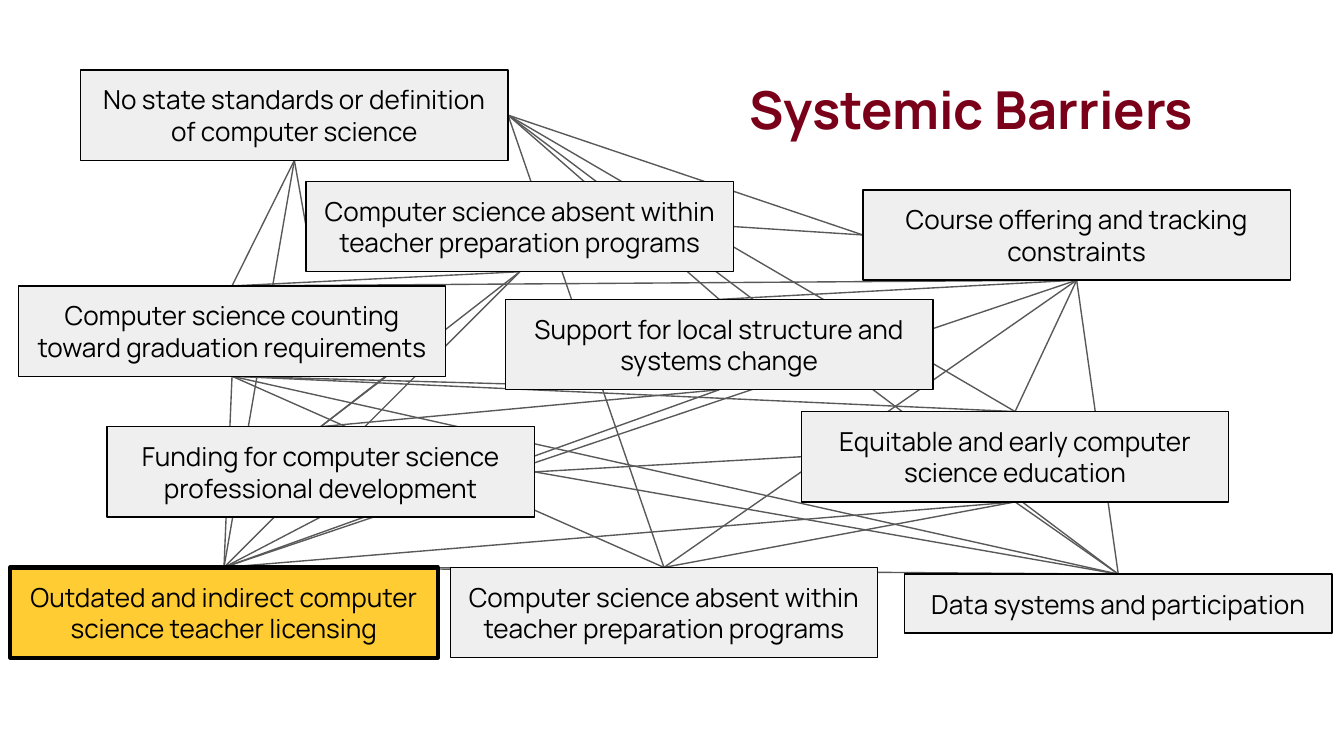
from dataclasses import dataclass

from lxml import etree
from pptx import Presentation
from pptx.dml.color import RGBColor
from pptx.enum.shapes import MSO_CONNECTOR, MSO_SHAPE
from pptx.enum.text import MSO_ANCHOR, MSO_AUTO_SIZE, PP_ALIGN
from pptx.oxml.ns import qn
from pptx.util import Pt

STRAIGHT = MSO_CONNECTOR.STRAIGHT
RECTANGLE = MSO_SHAPE.RECTANGLE
MIDDLE = MSO_ANCHOR.MIDDLE
CENTER = PP_ALIGN.CENTER
FIT_SHAPE = MSO_AUTO_SIZE.SHAPE_TO_FIT_TEXT
NO_FIT = MSO_AUTO_SIZE.NONE
TOP, LEFT, BOTTOM, RIGHT = range(4)
TITLE_ONLY = 5


@dataclass(frozen=True)
class Theme:
    font: str = "Manrope"
    title_size: float = 28
    barrier_size: float = 14
    maroon: RGBColor = RGBColor(0x7A, 0x00, 0x19)
    ink: RGBColor = RGBColor(0x00, 0x00, 0x00)
    panel: RGBColor = RGBColor(0xEF, 0xEF, 0xEF)
    gold: RGBColor = RGBColor(0xFF, 0xCC, 0x33)
    link: RGBColor = RGBColor(0x59, 0x59, 0x59)
    thin: float = 0.75
    thick: float = 2.25
    inset: float = 7.2


THEME = Theme()
BARRIER_WIDTH = 229
TWO_LINES, ONE_LINE = 48.4, 31.6
FOCUS = "licensing"

BARRIERS = {
    "standards": (38.2, 0.5, TWO_LINES, "No state standards or definition of computer science"),
    "graduation": (4.8, 116.2, TWO_LINES, "Computer science counting toward graduation requirements"),
    "preparation": (159, 60.2, TWO_LINES, "Computer science absent within teacher preparation programs"),
    "courses": (457.3, 64.7, TWO_LINES, "Course offering and tracking constraints"),
    "support": (265.8, 123.4, TWO_LINES, "Support for local structure and systems change"),
    "equity": (424.3, 183.5, TWO_LINES, "Equitable and early computer science education"),
    "funding": (52.3, 191.6, TWO_LINES, "Funding for computer science professional development"),
    "licensing": (0.5, 267, TWO_LINES, "Outdated and indirect computer science teacher licensing"),
    "programs": (236.2, 267, TWO_LINES, "Computer science absent within teacher preparation programs"),
    "data": (479.6, 270.6, ONE_LINE, "Data systems and participation"),
}

LINKS = {
    ("licensing", TOP): [
        ("graduation", BOTTOM), ("standards", BOTTOM), ("preparation", BOTTOM),
        ("funding", BOTTOM), ("programs", TOP), ("equity", BOTTOM),
        ("support", BOTTOM), ("data", TOP), ("courses", BOTTOM),
    ],
    ("graduation", TOP): [("standards", BOTTOM), ("preparation", BOTTOM), ("courses", BOTTOM)],
    ("graduation", BOTTOM): [("support", BOTTOM), ("equity", TOP), ("programs", TOP), ("data", TOP)],
    ("graduation", RIGHT): [("funding", TOP)],
    ("preparation", LEFT): [("standards", BOTTOM)],
    ("standards", RIGHT): [
        ("courses", LEFT), ("support", TOP), ("equity", TOP), ("data", TOP), ("programs", TOP),
    ],
    ("courses", BOTTOM): [("programs", TOP), ("equity", TOP), ("support", TOP), ("data", TOP)],
    ("equity", BOTTOM): [("data", TOP), ("programs", TOP)],
    ("funding", RIGHT): [("equity", LEFT), ("data", TOP)],
    ("preparation", RIGHT): [("courses", LEFT)],
    ("funding", TOP): [("support", BOTTOM), ("preparation", BOTTOM)],
}


def set_text(shape, text, size, color, bold, fit):
    frame = shape.text_frame
    frame.text = text
    frame.word_wrap = True
    frame.auto_size = fit
    frame.vertical_anchor = MIDDLE
    frame.margin_left = frame.margin_right = Pt(THEME.inset)
    frame.margin_top = frame.margin_bottom = Pt(THEME.inset)
    paragraph = frame.paragraphs[0]
    paragraph.alignment = CENTER
    font = paragraph.runs[0].font
    font.name, font.size, font.bold = THEME.font, Pt(size), bold
    font.color.rgb = color


def place_title(slide, left, top, width, height):
    heading = slide.shapes.title
    heading.left, heading.top = Pt(left), Pt(top)
    heading.width, heading.height = Pt(width), Pt(height)
    set_text(heading, "Systemic Barriers", THEME.title_size, THEME.maroon, True, NO_FIT)


def add_barrier(slide, left, top, height, text, focused):
    barrier = slide.shapes.add_shape(
        RECTANGLE, Pt(left), Pt(top), Pt(BARRIER_WIDTH), Pt(height))
    barrier.shadow.inherit = False
    barrier.fill.solid()
    barrier.fill.fore_color.rgb = THEME.gold if focused else THEME.panel
    barrier.line.color.rgb = THEME.ink
    barrier.line.width = Pt(THEME.thick if focused else THEME.thin)
    set_text(barrier, text, THEME.barrier_size, THEME.ink, False, FIT_SHAPE)
    return barrier


def add_link(slide, start, start_side, end, end_side):
    link = slide.shapes.add_connector(STRAIGHT, 0, 0, 0, 0)
    link.begin_connect(start, start_side)
    link.end_connect(end, end_side)
    link.line.color.rgb = THEME.link
    link.line.width = Pt(THEME.thin)
    etree.SubElement(link._element.spPr, qn("a:effectLst"))
    return link


def place_network(slide, left, top):
    barriers = {
        key: add_barrier(slide, left + x, top + y, height, text, key == FOCUS)
        for key, (x, y, height, text) in BARRIERS.items()
    }
    backmost = barriers["standards"]._element
    for (hub, hub_side), ends in LINKS.items():
        for end, end_side in ends:
            link = add_link(slide, barriers[hub], hub_side, barriers[end], end_side)
            backmost.addprevious(link._element)


def main():
    deck = Presentation()
    deck.slide_width, deck.slide_height = Pt(720), Pt(405)
    slide = deck.slides.add_slide(deck.slide_layouts[TITLE_ONLY])
    place_title(slide, 345, 35.3, 350.6, 45.4)
    place_network(slide, 5, 37)
    deck.save("out.pptx")


if __name__ == "__main__":
    main()
